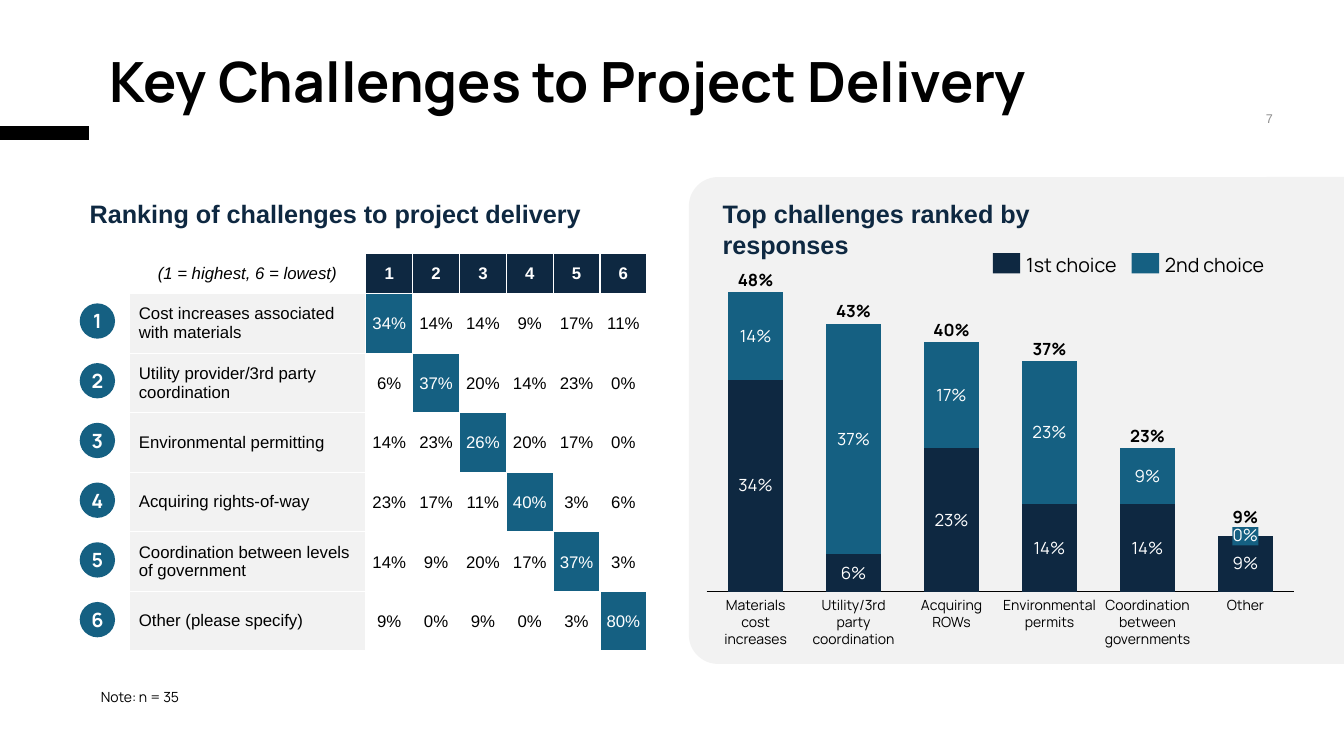
"""Build the slide on key challenges to project delivery."""
from dataclasses import dataclass
from typing import Optional

from lxml.etree import SubElement
from pptx import Presentation
from pptx.chart.data import CategoryChartData
from pptx.dml.color import RGBColor
from pptx.enum.chart import XL_CHART_TYPE, XL_LABEL_POSITION, XL_TICK_LABEL_POSITION, XL_TICK_MARK
from pptx.enum.shapes import MSO_CONNECTOR, MSO_SHAPE
from pptx.enum.text import MSO_ANCHOR, PP_ALIGN
from pptx.oxml import parse_xml
from pptx.oxml.ns import nsdecls, qn
from pptx.shapes.autoshape import Shape
from pptx.slide import Slide
from pptx.table import _Cell
from pptx.text.text import TextFrame
from pptx.util import Cm, Pt


@dataclass(frozen=True)
class Theme:
    """Colours, fonts and type sizes of the slide."""
    navy: str = "0E2841"
    teal: str = "156082"
    panel: str = "F2F2F2"
    black: str = "000000"
    white: str = "FFFFFF"
    muted: str = "8C8C8C"
    display: str = "Manrope"
    body: str = "Arial"
    title: float = 39.6
    heading: float = 18
    legend: float = 14
    value: float = 12
    label: float = 10
    page: float = 9


@dataclass(frozen=True)
class Box:
    """Place and size in centimetres."""
    left: float
    top: float
    width: float
    height: float

    def lengths(self) -> tuple[Cm, Cm, Cm, Cm]:
        """Return the four lengths in the order that shapes take them."""
        return Cm(self.left), Cm(self.top), Cm(self.width), Cm(self.height)


@dataclass(frozen=True)
class Ranking:
    """A challenge with the share of answers for each rank."""
    challenge: str
    shares: tuple[int, ...]


@dataclass(frozen=True)
class Column:
    """A stacked column with its label and label width."""
    label: str
    width: float
    first: int
    second: int


@dataclass(frozen=True)
class LegendKey:
    """A legend entry."""
    label: str
    color: str
    left: float
    width: float


THEME = Theme()
RANKINGS = (
    Ranking("Cost increases associated with materials", (34, 14, 14, 9, 17, 11)),
    Ranking("Utility provider/3rd party coordination", (6, 37, 20, 14, 23, 0)),
    Ranking("Environmental permitting", (14, 23, 26, 20, 17, 0)),
    Ranking("Acquiring rights-of-way", (23, 17, 11, 40, 3, 6)),
    Ranking("Coordination between levels of government", (14, 9, 20, 17, 37, 3)),
    Ranking("Other (please specify)", (9, 0, 9, 0, 3, 80)),
)
COLUMNS = (
    Column("Materials cost increases", 1.75, 34, 14),
    Column("Utility/3rd party coordination", 2.29, 6, 37),
    Column("Acquiring ROWs", 1.73, 23, 17),
    Column("Environmental permits", 2.57, 14, 23),
    Column("Coordination between governments", 2.41, 14, 9),
    Column("Other", 1.02, 9, 0),
)
LEGEND = (
    LegendKey("1st choice", THEME.navy, 25.02, 2.39),
    LegendKey("2nd choice", THEME.teal, 28.52, 2.74),
)
CHART = Box(17.58, 6.63, 15.27, 9.02)
PLOT = (0.015, 0.082, 0.97, 0.836)
PEAK = max(column.first + column.second for column in COLUMNS)
VALUE_HEIGHT = 0.46


def write_text(frame: TextFrame, text: str, *, size: float, font: str = THEME.display,
               color: str = THEME.black, bold: bool = False, italic: bool = False,
               align: PP_ALIGN = PP_ALIGN.LEFT, spacing: Optional[float] = None) -> None:
    """Write one formatted paragraph into a frame."""
    paragraph = frame.paragraphs[0]
    paragraph.alignment = align
    paragraph.line_spacing = spacing
    run = paragraph.add_run()
    run.text = text
    run.font.size, run.font.name = Pt(size), font
    run.font.bold, run.font.italic = bold, italic
    run.font.color.rgb = RGBColor.from_string(color)


def set_frame(frame: TextFrame, side: float, edge: float, anchor: MSO_ANCHOR, wrap: bool) -> None:
    """Set the insets, anchor and wrapping of a frame."""
    frame.margin_left = frame.margin_right = Cm(side)
    frame.margin_top = frame.margin_bottom = Cm(edge)
    frame.vertical_anchor, frame.word_wrap = anchor, wrap


def add_text(slide: Slide, text: str, box: Box, *, side: float = 0, edge: float = 0,
             anchor: MSO_ANCHOR = MSO_ANCHOR.TOP, wrap: bool = False, **style) -> None:
    """Add a text box."""
    frame = slide.shapes.add_textbox(*box.lengths()).text_frame
    set_frame(frame, side, edge, anchor, wrap)
    write_text(frame, text, **style)


def add_filled(slide: Slide, kind: MSO_SHAPE, box: Box, color: str) -> Shape:
    """Add a plain filled shape."""
    shape = slide.shapes.add_shape(kind, *box.lengths())
    shape.shadow.inherit = False
    shape.fill.solid()
    shape.fill.fore_color.rgb = RGBColor.from_string(color)
    shape.line.fill.background()
    set_frame(shape.text_frame, 0, 0, MSO_ANCHOR.MIDDLE, False)
    return shape


def fill_cell(cell: _Cell, text: str, *, fill: Optional[str] = None,
              margins: tuple[float, ...] = (0.03, 0.03, 0.03, 0), **style) -> None:
    """Fill a table cell and give it white borders."""
    cell.margin_left, cell.margin_top, cell.margin_right, cell.margin_bottom = map(Cm, margins)
    cell.vertical_anchor = MSO_ANCHOR.MIDDLE
    properties = cell._tc.get_or_add_tcPr()
    for side in ("lnL", "lnR", "lnT", "lnB"):
        border = SubElement(properties, qn(f"a:{side}"), w=str(Pt(1)))
        SubElement(SubElement(border, qn("a:solidFill")), qn("a:srgbClr"), val=THEME.white)
    if fill:
        cell.fill.solid()
        cell.fill.fore_color.rgb = RGBColor.from_string(fill)
    else:
        cell.fill.background()
    write_text(cell.text_frame, text, size=THEME.value, font=THEME.body, **style)


def add_ranking(slide: Slide) -> None:
    """Add the ranking table and its numbered badges."""
    count = len(RANKINGS)
    table = slide.shapes.add_table(count + 1, count + 1, *Box(3.25, 6.38, 13.05, 10.02).lengths()).table
    table.first_row = table.horz_banding = False
    for index in range(count + 1):
        table.columns[index].width = Cm(1.18 if index else 5.97)
        table.rows[index].height = Cm(1.5 if index else 1.02)
    fill_cell(table.cell(0, 0), "(1 = highest, 6 = lowest)", italic=True, align=PP_ALIGN.CENTER)
    for rank, ranking in enumerate(RANKINGS, 1):
        fill_cell(table.cell(0, rank), str(rank), fill=THEME.navy, color=THEME.white,
                  bold=True, align=PP_ALIGN.CENTER)
        fill_cell(table.cell(rank, 0), ranking.challenge, fill=THEME.panel,
                  margins=(0.25, 0.13, 0.13, 0.13))
        for place, share in enumerate(ranking.shares, 1):
            own = place == rank
            fill_cell(table.cell(rank, place), f"{share}%", fill=THEME.teal if own else None,
                      color=THEME.white if own else THEME.black, align=PP_ALIGN.CENTER)
        badge = add_filled(slide, MSO_SHAPE.OVAL, Box(2.01, 6.14 + 1.505 * rank, 0.89, 0.89), THEME.teal)
        write_text(badge.text_frame, str(rank), size=THEME.legend, color=THEME.white,
                   bold=True, align=PP_ALIGN.CENTER)


def add_responses(slide: Slide) -> None:
    """Add the stacked column chart."""
    data = CategoryChartData()
    data.categories = [str(place) for place in range(1, len(COLUMNS) + 1)]
    data.add_series("Series 1", [column.first for column in COLUMNS])
    data.add_series("Series 2", [column.second for column in COLUMNS])
    chart = slide.shapes.add_chart(XL_CHART_TYPE.COLUMN_STACKED, *CHART.lengths(), data).chart
    chart.has_legend = chart.has_title = False
    chart.font.size, chart.font.name = Pt(THEME.label), THEME.body
    chart.font.color.rgb = RGBColor.from_string(THEME.black)
    values, categories = chart.value_axis, chart.category_axis
    values.visible = values.has_major_gridlines = False
    values.minimum_scale, values.maximum_scale = 0, PEAK
    categories.tick_label_position = XL_TICK_LABEL_POSITION.NONE
    categories.major_tick_mark = categories.minor_tick_mark = XL_TICK_MARK.NONE
    categories.format.line.width = Pt(0.75)
    categories.format.line.color.rgb = RGBColor.from_string(THEME.black)
    plot = chart.plots[0]
    plot.gap_width, plot.overlap, plot.vary_by_categories = 80, 100, False
    for series, key in zip(plot.series, LEGEND):
        series.format.fill.solid()
        series.format.fill.fore_color.rgb = RGBColor.from_string(key.color)
        labels = series.data_labels
        labels.show_value, labels.position = True, XL_LABEL_POSITION.CENTER
        labels.number_format, labels.number_format_is_linked = '0"%";;', False
        labels.font.size, labels.font.name = Pt(THEME.value), THEME.display
        labels.font.color.rgb = RGBColor.from_string(THEME.white)
    area = chart.element.find(f".//{qn('c:plotArea')}")
    for layout in area.findall(qn("c:layout")):
        area.remove(layout)
    modes = '<c:layoutTarget val="inner"/><c:xMode val="edge"/><c:yMode val="edge"/>'
    sizes = "".join(f'<c:{tag} val="{part}"/>' for tag, part in zip("xywh", PLOT))
    area.insert(0, parse_xml(f'<c:layout {nsdecls("c")}><c:manualLayout>{modes}{sizes}</c:manualLayout></c:layout>'))


def add_column_labels(slide: Slide) -> None:
    """Add the names and totals of the columns and the legend."""
    step = CHART.width * PLOT[2] / len(COLUMNS)
    start = CHART.left + CHART.width * PLOT[0]
    scale = CHART.height * PLOT[3] / PEAK
    base = CHART.top + CHART.height * (PLOT[1] + PLOT[3])
    value_style = dict(size=THEME.value, align=PP_ALIGN.CENTER, spacing=0.9)
    for index, column in enumerate(COLUMNS):
        center = start + step * (index + 0.5)
        total = column.first + column.second
        bottom = base - total * scale - 0.05
        add_text(slide, column.label, Box(center - column.width / 2, 15.04, column.width, 1.27),
                 wrap=True, size=THEME.label, align=PP_ALIGN.CENTER)
        if not column.second:
            bottom -= 0.16
            zero = add_filled(slide, MSO_SHAPE.RECTANGLE, Box(center - 0.33, bottom, 0.66, VALUE_HEIGHT), THEME.teal)
            write_text(zero.text_frame, f"{column.second}%", color=THEME.white, **value_style)
        add_text(slide, f"{total}%", Box(center - 0.48, bottom - VALUE_HEIGHT, 0.96, VALUE_HEIGHT),
                 anchor=MSO_ANCHOR.BOTTOM, bold=True, **value_style)
    for key in LEGEND:
        add_filled(slide, MSO_SHAPE.RECTANGLE, Box(key.left, 6.38, 0.69, 0.51), key.color)
        add_text(slide, key.label, Box(key.left + 0.84, 6.38, key.width, 0.58),
                 anchor=MSO_ANCHOR.MIDDLE, size=THEME.legend)


def add_frame(slide: Slide) -> None:
    """Add the title, accent line, panel, headings, page number and note."""
    accent = slide.shapes.add_connector(MSO_CONNECTOR.STRAIGHT, Cm(0), Cm(3.35), Cm(2.24), Cm(3.35))
    accent.line.width = Pt(9.5)
    accent.line.color.rgb = RGBColor.from_string(THEME.black)
    SubElement(accent.element.spPr, qn("a:effectLst"))
    panel = add_filled(slide, MSO_SHAPE.ROUND_2_SAME_RECTANGLE, Box(19.48, 2.34, 12.27, 16.51), THEME.panel)
    panel.adjustments[0], panel.adjustments[1] = 0.06, 0
    panel.rotation = 270
    inset = dict(side=0.25, edge=0.13)
    add_text(slide, "Key Challenges to Project Delivery", Box(2.51, 1.32, 29.79, 1.27),
             wrap=True, size=THEME.title, bold=True, spacing=0.85, **inset)
    add_text(slide, "7", Box(24.28, 2.51, 7.8, 0.97), anchor=MSO_ANCHOR.MIDDLE, wrap=True,
             size=THEME.page, font=THEME.body, color=THEME.muted, align=PP_ALIGN.RIGHT)
    for heading, left, width in (("Ranking of challenges to project delivery", 2.01, 13),
                                 ("Top challenges ranked by responses", 17.96, 11.6)):
        add_text(slide, heading, Box(left, 4.88, width, 1.02), wrap=True, size=THEME.heading,
                 font=THEME.body, color=THEME.navy, bold=True, **inset)
    add_text(slide, "Note: n = 35", Box(2.29, 17.22, 23.11, 0.69), wrap=True, size=THEME.label, **inset)


def main() -> None:
    """Build and save the slide."""
    deck = Presentation()
    deck.slide_width, deck.slide_height = Cm(33.87), Cm(19.05)
    slide = deck.slides.add_slide(deck.slide_layouts[6])
    add_frame(slide)
    add_ranking(slide)
    add_responses(slide)
    add_column_labels(slide)
    deck.save("out.pptx")


if __name__ == "__main__":
    main()
